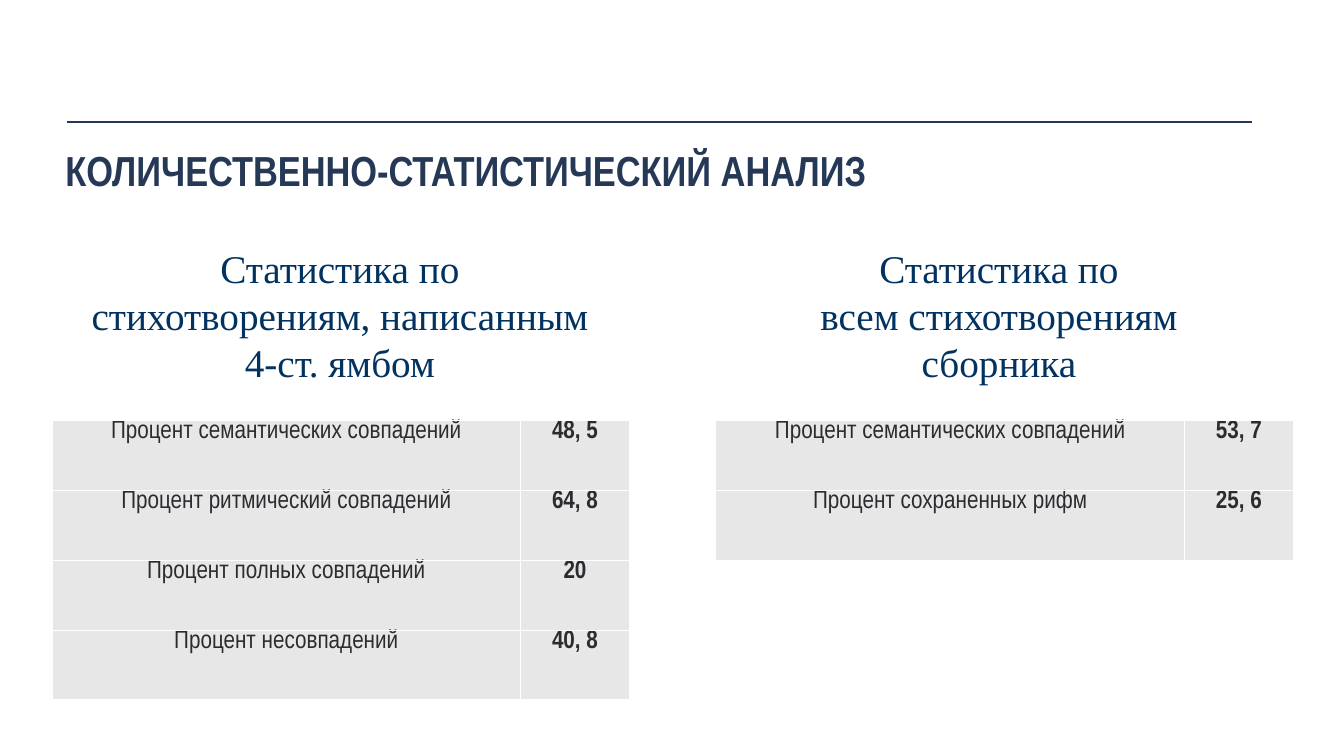
from dataclasses import dataclass

from lxml.etree import SubElement
from pptx import Presentation
from pptx.dml.color import RGBColor
from pptx.enum.shapes import MSO_CONNECTOR
from pptx.enum.text import MSO_ANCHOR, MSO_AUTO_SIZE, PP_ALIGN
from pptx.oxml import parse_xml
from pptx.oxml.ns import nsdecls, qn
from pptx.util import Cm, Pt

NAVY, BLUE, DARK, GREY, WHITE = "253957", "013260", "2A2C2F", "E7E7E7", "FFFFFF"
NARROW, SERIF = "Arial Narrow", "Times New Roman"
COL_WIDTHS = (11.81, 2.74)
ROW_HEIGHT = 1.76
TABLE_TOP = 10.6
HEADING_TOP, HEADING_WIDTH, HEADING_HEIGHT = 6.02, 13.11, 3.84


@dataclass
class Panel:
    heading: list[str]
    heading_left: float
    table_left: float
    rows: list[tuple[str, str]]


PANELS = [
    Panel(["Статистика по стихотворениям, написанным 4-ст. ямбом"], 2.01, 1.31, [
        ("Процент семантических совпадений", "48, 5"),
        ("Процент ритмический совпадений", "64, 8"),
        ("Процент полных совпадений", "20"),
        ("Процент несовпадений", "40, 8"),
    ]),
    Panel(["Статистика по", "всем стихотворениям сборника"], 18.62, 18.04, [
        ("Процент семантических совпадений", "53, 7"),
        ("Процент сохраненных рифм", "25, 6"),
    ]),
]


def rgb(color: str) -> RGBColor:
    return RGBColor.from_string(color)


def write(p, text: str, *, font: str, size: float, color: str,
          bold: bool = False, align=PP_ALIGN.CENTER) -> None:
    p.alignment = align
    r = p.add_run()
    r.text = text
    r.font.name, r.font.size, r.font.bold = font, Pt(size), bold
    r.font.color.rgb = rgb(color)


def add_borders(cell) -> None:
    tc_pr = cell._tc.get_or_add_tcPr()
    for i, side in enumerate(("lnL", "lnR", "lnT", "lnB")):
        tc_pr.insert(i, parse_xml(
            f'<a:{side} {nsdecls("a")} w="12700"><a:solidFill>'
            f'<a:srgbClr val="{WHITE}"/></a:solidFill></a:{side}>'))


def add_heading(s, panel: Panel) -> None:
    box = s.shapes.add_textbox(Cm(panel.heading_left), Cm(HEADING_TOP),
                               Cm(HEADING_WIDTH), Cm(HEADING_HEIGHT))
    tf = box.text_frame
    tf.word_wrap = True
    tf.auto_size = MSO_AUTO_SIZE.SHAPE_TO_FIT_TEXT
    for i, text in enumerate(panel.heading):
        p = tf.add_paragraph() if i else tf.paragraphs[0]
        write(p, text, font=SERIF, size=28, color=BLUE)


def add_stats(s, panel: Panel) -> None:
    n = len(panel.rows)
    table = s.shapes.add_table(n, len(COL_WIDTHS), Cm(panel.table_left), Cm(TABLE_TOP),
                               Cm(sum(COL_WIDTHS)), Cm(n * ROW_HEIGHT)).table
    table.first_row = table.horz_banding = False
    for col, width in zip(table.columns, COL_WIDTHS):
        col.width = Cm(width)
    for i, row in enumerate(panel.rows):
        table.rows[i].height = Cm(ROW_HEIGHT)
        for j, text in enumerate(row):
            cell = table.cell(i, j)
            cell.margin_top = cell.margin_bottom = 0
            cell.fill.solid()
            cell.fill.fore_color.rgb = rgb(GREY)
            add_borders(cell)
            write(cell.text_frame.paragraphs[0], text, font=NARROW, size=18,
                  color=DARK, bold=j == 1)


def add_title(s, text: str) -> None:
    title = s.shapes.title
    title.left, title.top, title.width, title.height = Cm(1.55), Cm(3.45), Cm(29.87), Cm(1.83)
    tf = title.text_frame
    tf.word_wrap = True
    tf.auto_size = MSO_AUTO_SIZE.NONE
    tf.vertical_anchor = MSO_ANCHOR.TOP
    tf.margin_left = tf.margin_right = tf.margin_bottom = Cm(0.1)
    tf.margin_top = Cm(0.2)
    write(tf.paragraphs[0], text, font=NARROW, size=30, color=NAVY,
          bold=True, align=PP_ALIGN.LEFT)


def add_rule(s) -> None:
    rule = s.shapes.add_connector(MSO_CONNECTOR.STRAIGHT, Cm(1.68), Cm(3.07), Cm(31.55), Cm(3.07))
    rule.line.color.rgb = rgb(NAVY)
    rule.line.width = Pt(1)
    SubElement(rule._element.spPr, qn("a:effectLst"))


def main() -> None:
    prs = Presentation()
    prs.slide_width, prs.slide_height = Cm(33.87), Cm(19.05)
    s = prs.slides.add_slide(prs.slide_layouts[5])

    # Title and the rule above it
    add_title(s, "КОЛИЧЕСТВЕННО-СТАТИСТИЧЕСКИЙ АНАЛИЗ")
    add_rule(s)

    # Two panels, each a heading over a table
    for panel in PANELS:
        add_heading(s, panel)
        add_stats(s, panel)

    prs.save("out.pptx")


if __name__ == "__main__":
    main()
